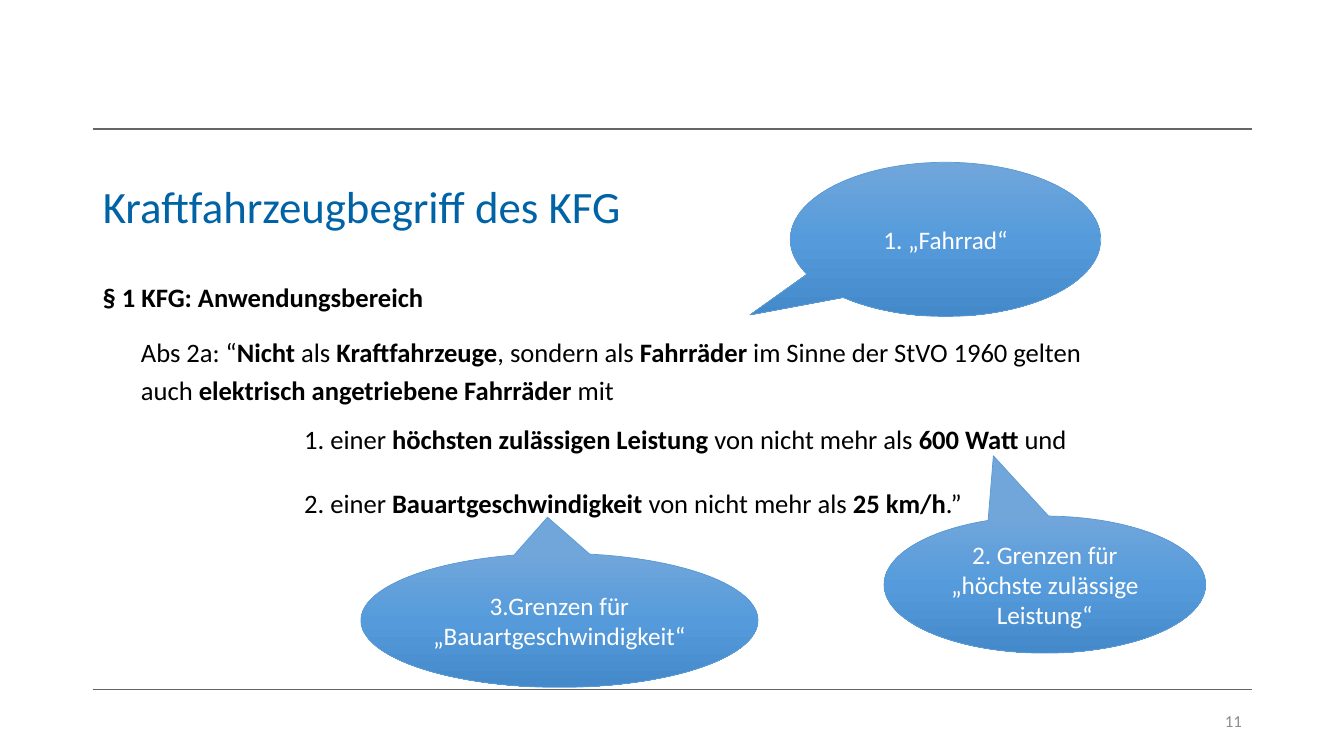
from copy import deepcopy
from dataclasses import dataclass
from typing import Any

from pptx import Presentation
from pptx import util as u
from pptx.dml.color import RGBColor
from pptx.enum import shapes, text
from pptx.oxml import ns, xmlchemy


@dataclass(frozen=True)
class Theme:
    font: str = "Calibri"
    title: str = "0063A6"
    body: str = "000000"
    muted: str = "8C8C8C"
    rule: str = "666666"
    light: str = "FFFFFF"
    outline: str = "5B9BD5"
    gradient: tuple[str, ...] = ("71A6DB", "559BDB", "448ACA")
    title_size: int = 32
    body_size: int = 19
    callout_size: int = 18
    number_size: int = 12


@dataclass(frozen=True)
class Area:
    left: float
    top: float
    width: float
    height: float


@dataclass(frozen=True)
class Rule:
    top: float
    weight: float


@dataclass(frozen=True)
class Callout:
    words: str
    area: Area
    tip: tuple[float, float]


@dataclass(frozen=True)
class Passage:
    words: str
    indent: float
    spacing: float
    after: int


THEME = Theme()
SLIDE_WIDTH, SLIDE_HEIGHT = u.Inches(13.33), u.Inches(7.5)
LEFT, RIGHT = 6.9, 93.15

RULES = [Rule(91.2, 0.5), Rule(17.07, 1)]
TITLE_AREA = Area(LEFT, 24.4, 47.78, 8.67)
BODY_AREA = Area(LEFT, 35.6, 75.23, 34)
NUMBER_AREA = Area(70.65, 92.67, 22.5, 5.33)
PASSAGES = [
    Passage("*§ 1 KFG: Anwendungsbereich*", 0, 1.2, 12),
    Passage(
        "Abs 2a: “*Nicht* als *Kraftfahrzeuge*, sondern als *Fahrräder* im Sinne "
        "der StVO 1960 gelten auch *elektrisch angetriebene Fahrräder *mit",
        2.85, 1.2, 12,
    ),
    Passage(
        "1. einer *höchsten zulässigen Leistung *von nicht mehr als *600 Watt *und",
        15, 1.0, 23,
    ),
    Passage(
        "2. einer *Bauartgeschwindigkeit* von nicht mehr als *25 km/h*.”",
        15, 1.0, 0,
    ),
]
CALLOUTS = [
    Callout("1. „Fahrrad“", Area(58.8, 21.47, 23.1, 20.4), (-0.63, 0.49)),
    Callout("2. Grenzen für „höchste zulässige Leistung“",
            Area(65.78, 68.27, 23.93, 18.13), (-0.16, -0.94)),
    Callout("3.Grenzen für „Bauartgeschwindigkeit“",
            Area(26.85, 73.2, 29.55, 17.73), (-0.03, -0.77)),
]


def across(share: float) -> int:
    return round(SLIDE_WIDTH * share / 100)


def down(share: float) -> int:
    return round(SLIDE_HEIGHT * share / 100)


def place(area: Area) -> tuple[int, int, int, int]:
    return across(area.left), down(area.top), across(area.width), down(area.height)


def apply(target: Any, values: dict[str, Any]) -> None:
    for name, value in values.items():
        setattr(target, name, value)


def write(paragraph: Any, words: str, size: int, color: str) -> None:
    for index, part in enumerate(words.split("*")):
        if part:
            run = paragraph.add_run()
            run.text = part
            apply(run.font, {"name": THEME.font, "size": u.Pt(size), "bold": index % 2 == 1})
            run.font.color.rgb = RGBColor.from_string(color)


def format_frame(shape: Any, anchor: text.MSO_ANCHOR) -> Any:
    apply(shape.text_frame, {
        "word_wrap": True,
        "auto_size": text.MSO_AUTO_SIZE.NONE,
        "vertical_anchor": anchor,
    })
    return shape.text_frame


def draw_rule(slide: Any, rule: Rule) -> None:
    connector = slide.shapes.add_connector(
        shapes.MSO_CONNECTOR.STRAIGHT,
        across(LEFT), down(rule.top), across(RIGHT), down(rule.top),
    )
    connector.line.color.rgb = RGBColor.from_string(THEME.rule)
    connector.line.width = u.Pt(rule.weight)
    connector._element.spPr.append(xmlchemy.OxmlElement("a:effectLst"))


def draw_title(slide: Any, words: str) -> None:
    title = slide.shapes.title
    apply(title, dict(zip(("left", "top", "width", "height"), place(TITLE_AREA))))
    paragraph = format_frame(title, text.MSO_ANCHOR.TOP).paragraphs[0]
    apply(paragraph, {"alignment": text.PP_ALIGN.LEFT, "line_spacing": 0.8})
    write(paragraph, words, THEME.title_size, THEME.title)


def draw_body(slide: Any) -> None:
    frame = format_frame(slide.shapes.add_textbox(*place(BODY_AREA)), text.MSO_ANCHOR.TOP)
    for index, passage in enumerate(PASSAGES):
        paragraph = frame.add_paragraph() if index else frame.paragraphs[0]
        apply(paragraph, {
            "line_spacing": passage.spacing,
            "space_after": u.Pt(passage.after),
        })
        paragraph._p.get_or_add_pPr().set("marL", str(across(passage.indent)))
        write(paragraph, passage.words, THEME.body_size, THEME.body)


def draw_number(slide: Any, words: str) -> None:
    box = slide.shapes.add_textbox(*place(NUMBER_AREA))
    paragraph = format_frame(box, text.MSO_ANCHOR.MIDDLE).paragraphs[0]
    paragraph.alignment = text.PP_ALIGN.RIGHT
    write(paragraph, words, THEME.number_size, THEME.muted)


def fill_gradient(shape: Any) -> None:
    shape.fill.gradient()
    shape.fill.gradient_angle = 270
    stop_list = next(shape._element.iter(ns.qn("a:gsLst")))
    stop_list.insert(1, deepcopy(stop_list[0]))
    for index, stop in enumerate(shape.fill.gradient_stops):
        stop.position = index / 2
        stop.color.rgb = RGBColor.from_string(THEME.gradient[index])


def draw_callout(slide: Any, callout: Callout) -> None:
    shape = slide.shapes.add_shape(shapes.MSO_SHAPE.OVAL_CALLOUT, *place(callout.area))
    for index, offset in enumerate(callout.tip):
        shape.adjustments[index] = offset
    fill_gradient(shape)
    shape.line.color.rgb = RGBColor.from_string(THEME.outline)
    shape.line.width = u.Pt(0.5)
    shape.shadow.inherit = False
    paragraph = format_frame(shape, text.MSO_ANCHOR.MIDDLE).paragraphs[0]
    paragraph.alignment = text.PP_ALIGN.CENTER
    write(paragraph, callout.words, THEME.callout_size, THEME.light)


def main() -> None:
    presentation = Presentation()
    apply(presentation, {"slide_width": SLIDE_WIDTH, "slide_height": SLIDE_HEIGHT})
    slide = presentation.slides.add_slide(presentation.slide_layouts.get_by_name("Title Only"))
    for rule in RULES:
        draw_rule(slide, rule)
    draw_number(slide, "11")
    draw_title(slide, "Kraftfahrzeugbegriff des KFG")
    draw_body(slide)
    for callout in CALLOUTS:
        draw_callout(slide, callout)
    presentation.save("out.pptx")


if __name__ == "__main__":
    main()
